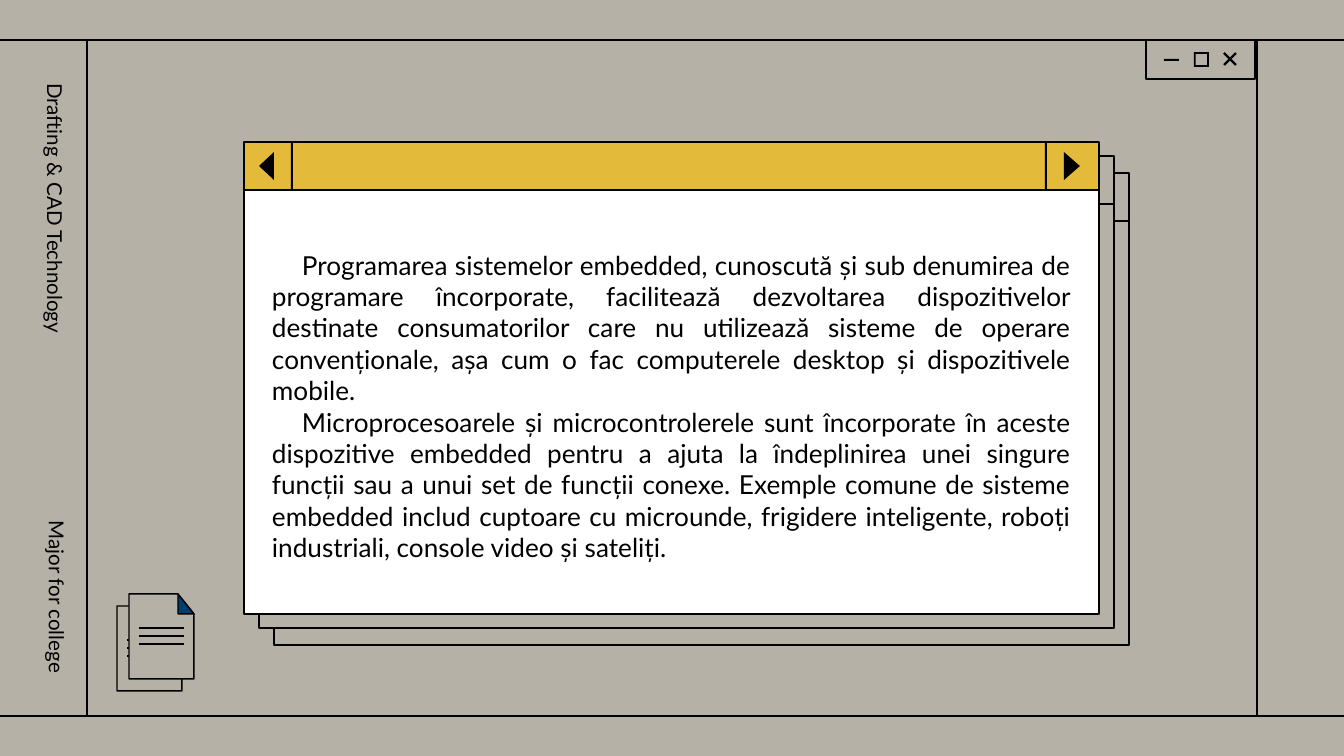
from lxml.etree import SubElement
from pptx import Presentation
from pptx.dml.color import RGBColor as RGB
from pptx.enum.shapes import MSO_CONNECTOR as LINK, MSO_SHAPE as SHAPE
from pptx.enum.text import MSO_ANCHOR as ANCHOR, PP_ALIGN as ALIGN
from pptx.oxml.ns import qn
from pptx.util import Pt

PX = 9144000 / 1344
WIDE, HIGH = 1344, 756
SAND = RGB(0xB5, 0xB1, 0xA7)
BLACK = RGB(0, 0, 0)
WHITE = RGB(0xFF, 0xFF, 0xFF)
GOLD = RGB(0xE4, 0xBA, 0x3A)
NAVY = RGB(0x02, 0x3D, 0x6F)

BODY = [
    "Programarea sistemelor embedded, cunoscută și sub denumirea de programare "
    "încorporate, facilitează dezvoltarea dispozitivelor destinate consumatorilor "
    "care nu utilizează sisteme de operare convenționale, așa cum o fac "
    "computerele desktop și dispozitivele mobile.",
    "Microprocesoarele și microcontrolerele sunt încorporate în aceste dispozitive "
    "embedded pentru a ajuta la îndeplinirea unei singure funcții sau a unui set de "
    "funcții conexe. Exemple comune de sisteme embedded includ cuptoare cu "
    "microunde, frigidere inteligente, roboți industriali, console video și sateliți.",
]


def emu(*sizes):
    return [round(size * PX) for size in sizes]


def write(frame, texts, size=11, align=ALIGN.LEFT, indent=0, space=None, after=0):
    for i, text in enumerate(texts):
        para = frame.paragraphs[0] if i == 0 else frame.add_paragraph()
        para.alignment = align
        para.line_spacing = space
        para.space_after = Pt(after)
        if indent:
            props = para._p.get_or_add_pPr()
            props.set("marL", "0")
            props.set("indent", str(emu(indent)[0]))
        run = para.add_run()
        run.text = text
        run.font.name = "Lato"
        run.font.size = Pt(size)
        run.font.color.rgb = BLACK


class Board:
    def __init__(self, slide, font_inset=13, weight=0.75):
        self.shapes = slide.shapes
        self.inset = font_inset
        self.weight = weight

    def paint(self, shape, fill, edge):
        shape.shadow.inherit = False
        if fill is None:
            shape.fill.background()
        else:
            shape.fill.solid()
            shape.fill.fore_color.rgb = fill
        if edge:
            shape.line.color.rgb = BLACK
            shape.line.width = Pt(self.weight)
        else:
            shape.line.fill.background()
        return shape

    def rect(self, x, y, w, h, fill=None, edge=True, kind=SHAPE.RECTANGLE):
        shape = self.shapes.add_shape(kind, *emu(x, y, w, h))
        return self.paint(shape, fill, edge)

    def poly(self, points, fill, edge=True):
        pen = self.shapes.build_freeform(*points[0], scale=PX)
        pen.add_line_segments(points[1:], close=True)
        return self.paint(pen.convert_to_shape(), fill, edge)

    def line(self, x1, y1, x2, y2, weight=None):
        link = self.shapes.add_connector(LINK.STRAIGHT, *emu(x1, y1, x2, y2))
        link.line.color.rgb = BLACK
        link.line.width = Pt(weight or self.weight)
        SubElement(link._element.spPr, qn("a:effectLst"))

    def text(self, x, y, w, h, texts, turn=0, **style):
        box = self.shapes.add_textbox(*emu(x, y, w, h))
        box.rotation = turn
        frame = box.text_frame
        frame.word_wrap = True
        frame.vertical_anchor = ANCHOR.MIDDLE
        inset = emu(self.inset)[0]
        frame.margin_left = frame.margin_right = inset
        frame.margin_top = frame.margin_bottom = inset
        write(frame, texts, **style)

    def window(self, x, y, fill=None, bar=None, mark=None):
        self.rect(x, y + 48, 855, 424, fill)
        self.rect(x, y, 855, 48, bar)
        if mark is None:
            return
        for left, base, tip in ((47, 30, 15), (801, 820, 836)):
            self.rect(x + left, y, 2, 48, mark, edge=False)
            self.poly([(x + base, y + 10), (x + tip, y + 24), (x + base, y + 38)],
                      mark, edge=False)

    def page(self, x, y, fold):
        self.poly([(x, y), (x, y + 85), (x + 65, y + 85), (x + 65, y + 20),
                   (x + 49, y)], SAND)
        self.poly([(x + 49, y), (x + 49, y + 20), (x + 65, y + 20)], fold)
        for drop in (34, 42, 50):
            self.line(x + 10, y + drop, x + 55, y + drop)

    def buttons(self):
        self.rect(1146, 40, 109, 39, SAND)
        self.rect(1164, 59, 15, 2, BLACK, edge=False)
        box = self.rect(1194, 52, 15, 15, BLACK, edge=False, kind=SHAPE.FRAME)
        box.adjustments[0] = 0.12
        self.line(1224, 53, 1236, 65, 1.25)
        self.line(1224, 65, 1236, 53, 1.25)


def main():
    deck = Presentation()
    deck.slide_width, deck.slide_height = emu(WIDE, HIGH)
    slide = deck.slides.add_slide(deck.slide_layouts[6])
    slide.background.fill.solid()
    slide.background.fill.fore_color.rgb = SAND
    board = Board(slide)

    board.buttons()
    for y in (40, 716):
        board.line(0, y, WIDE, y)
    for x in (87, 1257):
        board.line(x, 716, x, 40)

    board.window(274, 173)
    board.window(259, 156, SAND, SAND, SAND)
    board.window(244, 142, WHITE, GOLD, BLACK)
    board.text(259, 218, 825, 376, BODY, size=14, align=ALIGN.JUSTIFY, indent=30)

    board.text(-99, 211, 312, 30, ["Drafting & CAD Technology"], turn=90,
               space=1.15, after=12)
    board.text(-82, 532, 278, 30, ["Major for college"], turn=90, align=ALIGN.RIGHT)

    board.page(117, 606, GOLD)
    board.page(129, 594, NAVY)
    deck.save("out.pptx")


if __name__ == "__main__":
    main()
